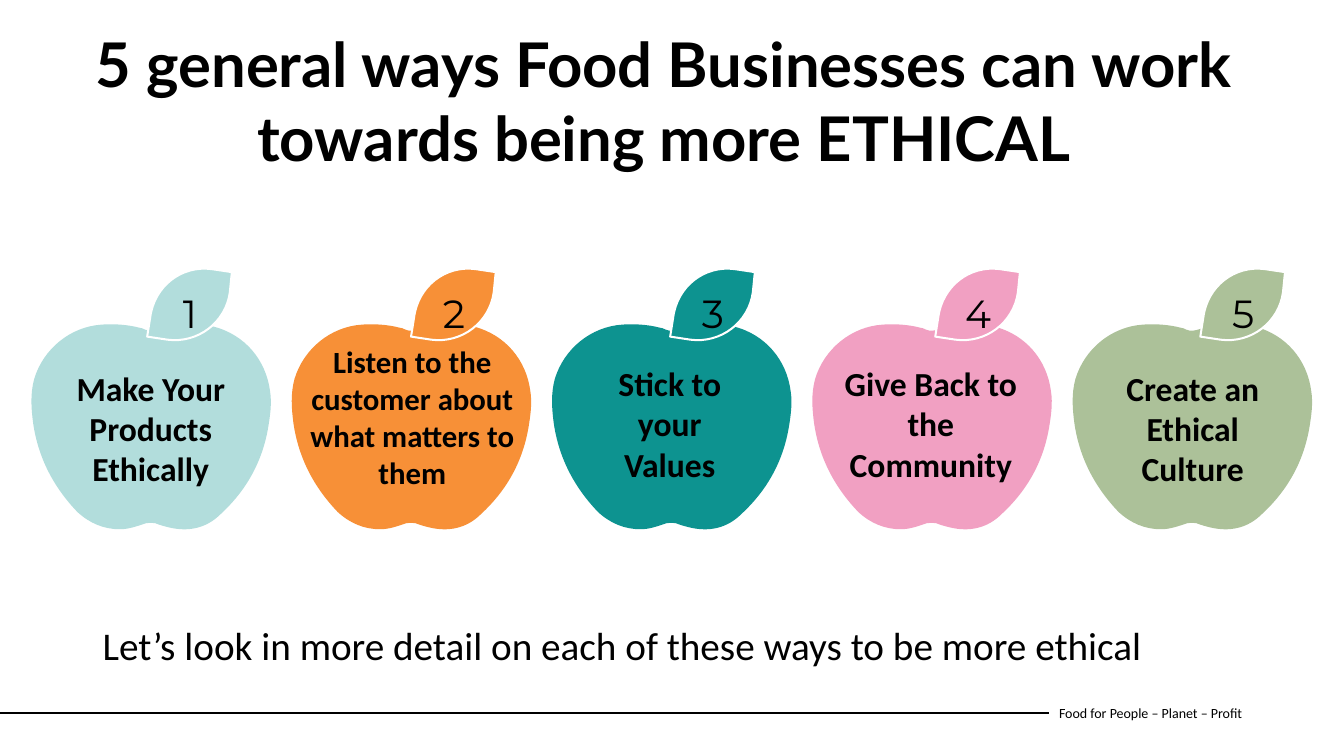
from pptx import Presentation
from pptx.dml.color import RGBColor
from pptx.enum.shapes import MSO_CONNECTOR
from pptx.enum.text import MSO_ANCHOR, MSO_AUTO_SIZE, PP_ALIGN
from pptx.oxml.ns import qn
from pptx.util import Cm, Pt
from lxml.etree import Element, SubElement

COLORS = {"black": "000000", "white": "FFFFFF", "aqua": "B2DDDC",
          "orange": "F79037", "teal": "0D9390", "pink": "F1A0C2", "sage": "ACC199"}
GRID = Cm(2.54) // 100  # one step of the outline coordinates

# Each outline starts with a point; two numbers add a line, six a Bezier curve.
APPLE = [
    (238, 68),
    (234, 37, 213, 12, 182, 4), (167, 0, 152, 1, 137, 4),
    (134, 5, 132, 5, 129, 6), (126, 7, 122, 8, 120, 8),
    (118, 8, 116, 8, 114, 7), (112, 6, 110, 5, 108, 5),
    (97, 2, 82, 1, 71, 2), (40, 4, 13, 26, 4, 56),
    (0, 71, 1, 85, 3, 100), (8, 134, 23, 163, 47, 188),
    (59, 199, 73, 205, 89, 205), (98, 205, 106, 202, 115, 199),
    (118, 199, 121, 198, 124, 199), (129, 201, 133, 202, 137, 203),
    (157, 208, 175, 204, 189, 190), (214, 167, 230, 139, 236, 105),
    (238, 93, 240, 80, 238, 68),
]
LEAF = [
    (20, 74), (0, 71), (3, 52), (7, 21, 34, 0, 64, 4),
    (84, 7), (82, 27), (78, 57, 50, 78, 20, 74),
]

# Colour, leaf left, caption left, caption top, caption width, size, caption
WAYS = [
    ("aqua", 3.71, 1.55, 9.14, 4.5, 24, "Make Your Products Ethically"),
    ("orange", 10.36, 7.52, 8.51, 5.74, 22,
     "Listen to the customer about what matters to them"),
    ("teal", 16.89, 14.63, 9.02, 4.5, 24, "Stick to your Values"),
    ("pink", 23.57, 20.96, 9.02, 5, 24, "Give Back to the Community"),
    ("sage", 30.25, 27.81, 9.14, 4.5, 24, "Create an Ethical Culture"),
]


def add_outline(outline, left, top, color):
    """Draw a filled closed outline whose origin lies at left, top (in cm)."""
    ends = [(segment[-2] * GRID, segment[-1] * GRID) for segment in outline]
    builder = page.shapes.build_freeform(*ends[0])
    builder.add_line_segments(ends[1:], close=True)
    shape = builder.convert_to_shape(Cm(left), Cm(top))
    # Bend the straight segments that have control points.
    min_x, min_y = (min(values) for values in zip(*ends))
    for node, segment in zip(list(shape.element.iter(qn("a:lnTo"))), outline[1:]):
        if len(segment) == 6:
            node.tag = qn("a:cubicBezTo")
            for place, (x, y) in enumerate((segment[:2], segment[2:4])):
                node.insert(place, Element(qn("a:pt"), x=str(x * GRID - min_x),
                                           y=str(y * GRID - min_y)))
    shape.shadow.inherit = False
    shape.fill.solid()
    shape.fill.fore_color.rgb = RGBColor.from_string(COLORS[color])
    shape.line.fill.background()
    return shape


def write_text(text, area, size, font="Calibri", bold=False,
               align=PP_ALIGN.CENTER, anchor=MSO_ANCHOR.TOP, box=None):
    """Write one paragraph into box, or into a new text box, at area (in cm)."""
    left, top, width, height = (Cm(length) for length in area)
    box = box or page.shapes.add_textbox(left, top, width, height)
    frame = box.text_frame
    para = frame.paragraphs[0]
    span = para.add_run()
    span.text = text
    span.font.color.rgb = RGBColor.from_string(COLORS["black"])
    formats = [
        (box, {"left": left, "top": top, "width": width, "height": height}),
        (frame, {"word_wrap": True, "auto_size": MSO_AUTO_SIZE.NONE,
                 "vertical_anchor": anchor}),
        (para, {"alignment": align}),
        (span.font, {"name": font, "size": Pt(size), "bold": bold}),
    ]
    for target, values in formats:
        for name, value in values.items():
            setattr(target, name, value)


deck = Presentation()
deck.slide_width, deck.slide_height = Cm(33.87), Cm(19.05)
page = deck.slides.add_slide(deck.slide_layouts[5])

# Footer
write_text("Food for People – Planet – Profit", (26.44, 17.45, 6.93, 1.02), 10,
           align=PP_ALIGN.LEFT, anchor=MSO_ANCHOR.MIDDLE)
rule = page.shapes.add_connector(MSO_CONNECTOR.STRAIGHT, 0, Cm(17.96), Cm(26.44), Cm(17.96))
rule.line.color.rgb = RGBColor.from_string(COLORS["black"])
rule.line.width = Pt(1.5)
SubElement(rule.element.spPr, qn("a:effectLst"))

# Title
write_text("5 general ways Food Businesses can work towards being more ETHICAL",
           (0.38, 0.53, 32.72, 4.01), 44, font="Lato", bold=True, box=page.shapes.title)

# Numbered apples
for index, (color, leaf_left, left, top, width, size, caption) in enumerate(WAYS):
    add_outline(APPLE, 0.76 + 6.56 * index, 8.13, color)
    leaf = add_outline(LEAF, leaf_left, 6.68, color)
    leaf.line.color.rgb = RGBColor.from_string(COLORS["white"])
    leaf.line.width = Pt(1.45)
    write_text(str(index + 1), (leaf_left + 0.13, 7.16, 1.9, 1.45), 28, font="Montserrat")
    write_text(caption, (left, top, width, 3.33), size, bold=True)

# Closing line
write_text("Let’s look in more detail on each of these ways to be more ethical",
           (2.34, 15.52, 28.35, 1.45), 28, align=PP_ALIGN.LEFT)

deck.save("out.pptx")
